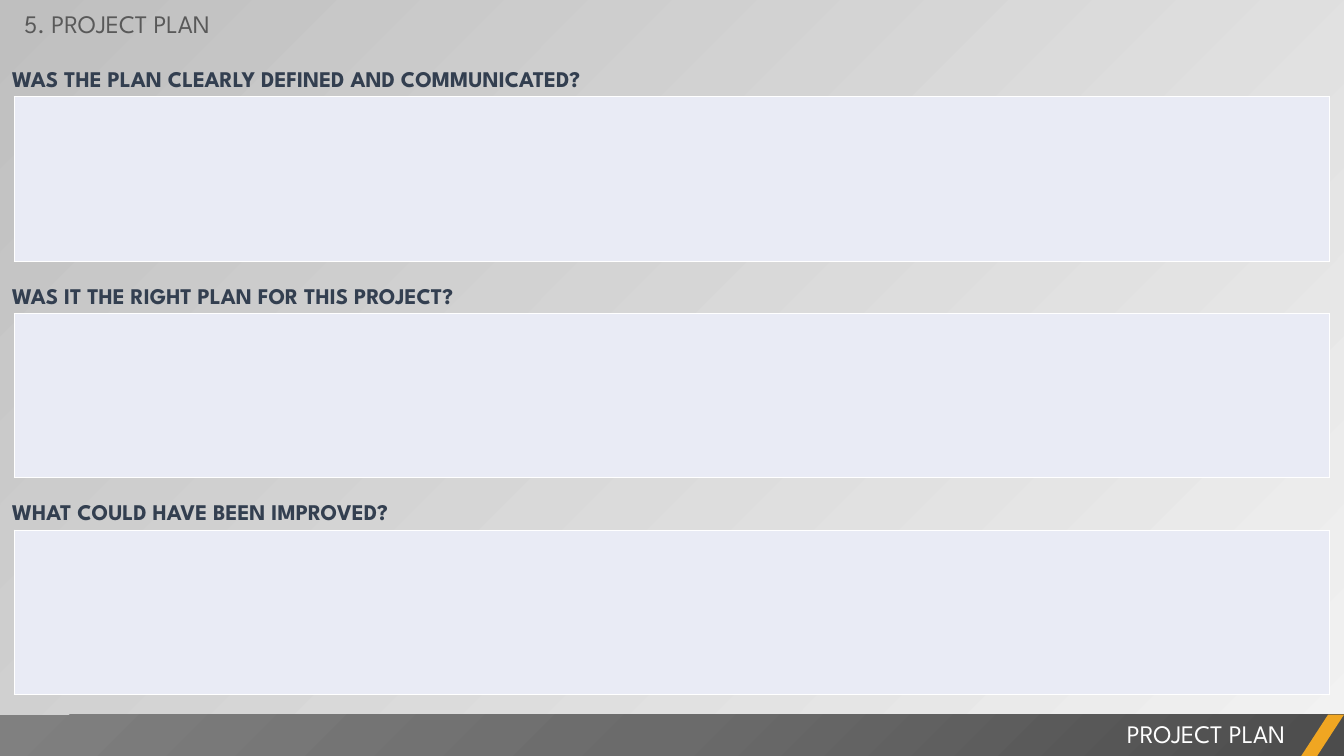
"""Build the project plan review slide with three questions and answer panels."""
from lxml import etree
from pptx import Presentation
from pptx.dml.color import RGBColor
from pptx.enum.shapes import MSO_SHAPE
from pptx.enum.text import MSO_AUTO_SIZE, PP_ALIGN
from pptx.oxml import parse_xml
from pptx.oxml.ns import nsdecls, qn
from pptx.util import Cm, Pt

TITLE = "5. PROJECT PLAN"
FOOTER = "PROJECT PLAN"
QUESTIONS = [
    ("WAS THE PLAN CLEARLY DEFINED AND COMMUNICATED?", 1.42, Pt(21.5)),
    ("WAS IT THE RIGHT PLAN FOR THIS PROJECT?", 6.88, Pt(21.5)),
    ("WHAT COULD HAVE BEEN IMPROVED?", 12.27, 1.2),
]
BAR_STOPS = [(0, "4C4C4C"), (50, "6B6B6B"), (100, "808080")]

FONT = "League Spartan"
WHITE = RGBColor(0xFF, 0xFF, 0xFF)
SILVER = RGBColor(0xBF, 0xBF, 0xBF)
PALE_GREY = RGBColor(0xF2, 0xF2, 0xF2)
GREY = RGBColor(0x59, 0x59, 0x59)
NAVY = RGBColor(0x33, 0x3F, 0x50)
PANEL = RGBColor(0xE9, 0xEB, 0xF5)
AMBER = RGBColor(0xF0, 0xA6, 0x22)
LEFT, RIGHT = PP_ALIGN.LEFT, PP_ALIGN.RIGHT
RECTANGLE, PARALLELOGRAM = MSO_SHAPE.RECTANGLE, MSO_SHAPE.PARALLELOGRAM
FIT_SHAPE = MSO_AUTO_SIZE.SHAPE_TO_FIT_TEXT

SLIDE_WIDTH, SLIDE_HEIGHT = 33.87, 19.05
PANEL_LEFT, PANEL_TOP, PANEL_WIDTH, PANEL_HEIGHT = 0.36, 2.44, 33.15, 4.14
PANEL_PITCH = 5.46
BAR_TOP, BAR_HEIGHT = 18.01, 1.06
STRIPE_WIDTH = 1.09


def add_text(page, text, left, top, width, size, color, align=LEFT, bold=False):
    box = page.shapes.add_textbox(Cm(left), Cm(top), Cm(width), Cm(1.02))
    frame = box.text_frame
    frame.word_wrap = True
    frame.auto_size = FIT_SHAPE
    para = frame.paragraphs[0]
    para.alignment = align
    span = para.add_run()
    span.text = text
    span.font.name = FONT
    span.font.size = Pt(size)
    span.font.bold = bold
    span.font.color.rgb = color
    return frame


def add_question(page, text, top, spacing):
    frame = add_text(page, text, 0, top, 19.38, 16, NAVY, bold=True)
    frame.margin_left = frame.margin_right = Cm(0.3)
    frame.margin_top = frame.margin_bottom = Cm(0.15)
    frame.paragraphs[0].line_spacing = spacing
    frame.paragraphs[0].space_before = Pt(3.2)


def add_panel(page, top):
    table = page.shapes.add_table(
        1, 1, Cm(PANEL_LEFT), Cm(top), Cm(PANEL_WIDTH), Cm(PANEL_HEIGHT)
    ).table
    table.first_row = table.horz_banding = False
    cell = table.cell(0, 0)
    cell.fill.solid()
    cell.fill.fore_color.rgb = PANEL
    properties = cell._tc.get_or_add_tcPr()
    for position, side in enumerate(("lnL", "lnR", "lnT", "lnB")):
        border = parse_xml(
            f'<a:{side} {nsdecls("a")} w="12700"><a:solidFill>'
            f'<a:srgbClr val="{WHITE}"/></a:solidFill></a:{side}>'
        )
        properties.insert(position, border)


def add_block(page, kind, left, width):
    block = page.shapes.add_shape(kind, Cm(left), Cm(BAR_TOP), Cm(width), Cm(BAR_HEIGHT))
    block.shadow.inherit = False
    block.line.fill.background()
    return block


def fill_radial(shape, stops):
    shape.fill.gradient()
    gradient = shape._element.spPr.find(qn("a:gradFill"))
    for child in list(gradient):
        gradient.remove(child)
    stop_list = etree.SubElement(gradient, qn("a:gsLst"))
    for percent, color in stops:
        stop = etree.SubElement(stop_list, qn("a:gs"), pos=str(percent * 1000))
        etree.SubElement(stop, qn("a:srgbClr"), val=color)
    radial = etree.SubElement(gradient, qn("a:path"), path="circle")
    etree.SubElement(radial, qn("a:fillToRect"), l="100000", t="100000")


def main():
    deck = Presentation()
    deck.slide_width, deck.slide_height = Cm(SLIDE_WIDTH), Cm(SLIDE_HEIGHT)
    page = deck.slides.add_slide(deck.slide_layouts[6])

    backdrop = page.background.fill
    backdrop.gradient()
    backdrop.gradient_angle = 135
    for stop, color in zip(backdrop.gradient_stops, (PALE_GREY, SILVER)):
        stop.color.rgb = color

    for index, (text, top, spacing) in enumerate(QUESTIONS):
        add_panel(page, PANEL_TOP + index * PANEL_PITCH)
        add_question(page, text, top, spacing)

    bar = add_block(page, RECTANGLE, 0, SLIDE_WIDTH)
    fill_radial(bar, BAR_STOPS)
    add_text(page, FOOTER, 13.34, 17.98, 19.3, 18, WHITE, RIGHT)
    stripe = add_block(page, PARALLELOGRAM, SLIDE_WIDTH - STRIPE_WIDTH, STRIPE_WIDTH)
    stripe.adjustments[0] = 0.65
    stripe.fill.solid()
    stripe.fill.fore_color.rgb = AMBER
    add_text(page, TITLE, PANEL_LEFT, 0.08, 13.49, 18, GREY)

    deck.save("out.pptx")


if __name__ == "__main__":
    main()
